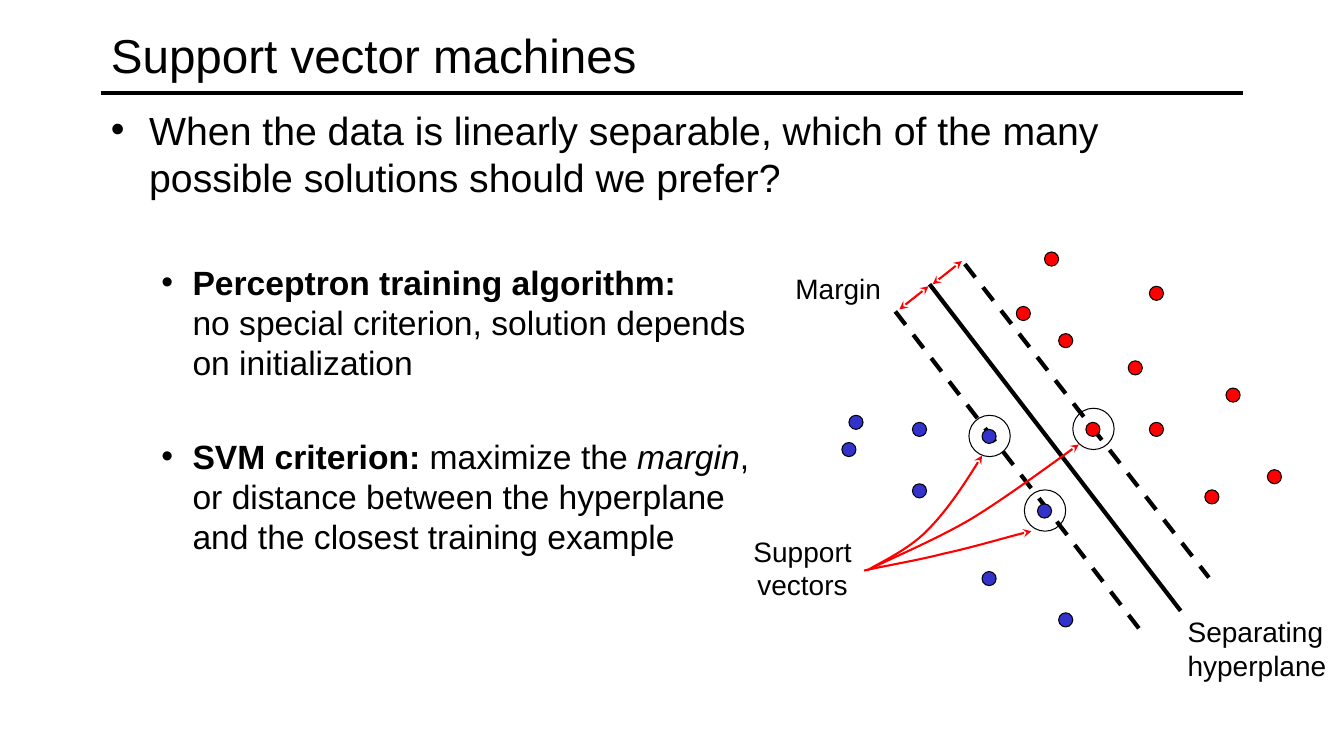
from dataclasses import dataclass

from lxml import etree
from pptx import Presentation
from pptx import util as u
from pptx.dml.color import RGBColor
from pptx.enum import dml, shapes, text
from pptx.oxml import ns

PX = 9144  # 100 px to the inch
FONT = "Arial"
BLACK, RED, BLUE = "000000", "FF0000", "3333CC"
DOT = 14


@dataclass
class Line:
    start: tuple[int, int]
    end: tuple[int, int]
    color: str = BLACK
    width: float = 3
    dashed: bool = False
    arrows: tuple[str, ...] = ()


@dataclass
class Label:
    words: str
    box: tuple[int, int, int, int]
    align: text.PP_ALIGN = text.PP_ALIGN.LEFT
    wrap: bool = True


@dataclass
class Bullet:
    level: int
    size: int
    margin: int
    hang: int
    before: int
    lines: list[list[tuple[str, str]]]  # (words, style) runs; style is "", "b" or "i"


BULLETS = [
    Bullet(0, 28, 38, 38, 0, [[(
        "When the data is linearly separable, which of the many "
        "possible solutions should we prefer?", "")]]),
    Bullet(1, 24, 81, 31, 44, [
        [("Perceptron training algorithm: ", "b")],
        [("no special criterion, solution depends ", "")],
        [("on initialization", "")]]),
    Bullet(1, 24, 81, 31, 38, [
        [("SVM criterion: ", "b"), ("maximize the ", ""), ("margin", "i"), (", ", "")],
        [("or distance between the hyperplane ", "")],
        [("and the closest training example", "")]]),
]

BOTH_ENDS = ("headEnd", "tailEnd")
LINES = [
    Line((100, 92), (1233, 92)),  # rule under the title
    Line((957, 262), (1199, 573), dashed=True),
    Line((888, 309), (1137, 633), dashed=True),
    Line((922, 282), (1171, 606)),  # separating hyperplane
    Line((892, 307), (921, 284), RED, 1.5, arrows=BOTH_ENDS),
    Line((925, 282), (954, 259), RED, 1.5, arrows=BOTH_ENDS),
]

# Top left corners of the data points
DOTS = {
    BLUE: [(842, 412), (905, 419), (905, 480), (835, 439), (974, 567),
           (1050, 608), (974, 426), (1029, 500)],
    RED: [(1050, 331), (1119, 358), (1140, 419), (1008, 304), (1195, 486), (1216, 385),
          (1140, 284), (1257, 466), (1036, 250), (1077, 419)],
}
RINGS = [(961, 412), (1064, 405), (1016, 486)]
RING = 41

# Each pointer: its tip, then three points for every Bezier segment
POINTERS = [
    [(974, 452), (957, 480), (938, 508), (919, 527), (900, 546), (873, 558), (860, 566)],
    [(1023, 527), (1008, 530), (965, 543), (937, 549), (910, 556), (874, 562), (857, 566)],
    [(1070, 441), (1053, 453), (996, 495), (963, 515), (929, 535), (884, 554), (864, 564)],
]

LABELS = [
    Label("Margin", (779, 264, 105, 43), wrap=False),
    Label("Support vectors", (717, 525, 158, 77), text.PP_ALIGN.CENTER),
    Label("Separating hyperplane", (1168, 605, 165, 77)),
]


def px(*values: int) -> list[int]:
    return [u.Emu(v * PX) for v in values]


def rgb(color: str) -> RGBColor:
    return RGBColor.from_string(color)


def place(sp, box: tuple[int, int, int, int]) -> None:
    sp.left, sp.top, sp.width, sp.height = px(*box)


def add_run(p, words: str, size: int, style: str = "") -> None:
    r = p.add_run()
    r.text = words
    r.font.name, r.font.size = FONT, u.Pt(size)
    r.font.bold, r.font.italic = style == "b", style == "i"
    r.font.color.rgb = rgb(BLACK)


def set_stroke(sp, color: str, width: float, dashed: bool = False, arrows=()) -> None:
    sp.line.color.rgb = rgb(color)
    sp.line.width = u.Pt(width)
    if dashed:
        sp.line.dash_style = dml.MSO_LINE.DASH
    ln = sp.line.fill._xPr
    for end in arrows:
        etree.SubElement(ln, ns.qn(f"a:{end}"), type="stealth")


def add_line(slide, line: Line) -> None:
    sp = slide.shapes.add_connector(
        shapes.MSO_CONNECTOR.STRAIGHT, *px(*line.start, *line.end))
    set_stroke(sp, line.color, line.width, line.dashed, line.arrows)
    etree.SubElement(sp._element.spPr, ns.qn("a:effectLst"))


def add_circle(slide, corner: tuple[int, int], size: int, fill: str | None = None) -> None:
    sp = slide.shapes.add_shape(shapes.MSO_SHAPE.OVAL, *px(*corner, size, size))
    sp.shadow.inherit = False
    if fill:
        sp.fill.solid()
        sp.fill.fore_color.rgb = rgb(fill)
    else:
        sp.fill.background()
    set_stroke(sp, BLACK, 0.75)


def add_pointer(slide, points: list[tuple[int, int]]) -> None:
    builder = slide.shapes.build_freeform(*points[0], scale=PX)
    builder.add_line_segments(points[1:], close=False)
    sp = builder.convert_to_shape()
    sp.shadow.inherit = False
    sp.fill.background()
    set_stroke(sp, RED, 1.5, arrows=("headEnd",))
    # Turn every three straight steps into one Bezier segment
    steps = list(sp._element.iter(ns.qn("a:lnTo")))
    outline = steps[0].getparent()
    for i in range(0, len(steps), 3):
        curve = etree.SubElement(outline, ns.qn("a:cubicBezTo"))
        for step in steps[i:i + 3]:
            curve.append(step[0])
            outline.remove(step)


def add_label(slide, label: Label) -> None:
    sp = slide.shapes.add_textbox(*px(*label.box))
    tf = sp.text_frame
    tf.word_wrap = label.wrap
    p = tf.paragraphs[0]
    p.alignment = label.align
    add_run(p, label.words, 20)


def fill_bullet(p, bullet: Bullet) -> None:
    p.level = bullet.level
    p.space_before = u.Pt(bullet.before)
    pPr = p._p.get_or_add_pPr()
    pPr.set("marL", str(bullet.margin * PX))
    pPr.set("indent", str(-bullet.hang * PX))
    etree.SubElement(pPr, ns.qn("a:buChar"), char="•")
    for i, runs in enumerate(bullet.lines):
        if i:
            p.add_line_break()
        for words, style in runs:
            add_run(p, words, bullet.size, style)


def main() -> None:
    prs = Presentation()
    prs.slide_width, prs.slide_height = px(1333, 750)
    slide = prs.slides.add_slide(prs.slide_layouts[1])

    # Title
    title = slide.shapes.title
    place(title, (100, 8, 1133, 92))
    tf = title.text_frame
    tf.auto_size = text.MSO_AUTO_SIZE.NONE
    tf.vertical_anchor = text.MSO_ANCHOR.MIDDLE
    tf.paragraphs[0].alignment = text.PP_ALIGN.LEFT
    add_run(tf.paragraphs[0], "Support vector machines", 34)

    # Bullet list
    body = slide.placeholders[1]
    place(body, (100, 100, 1133, 575))
    tf = body.text_frame
    tf.auto_size = text.MSO_AUTO_SIZE.NONE
    for i, bullet in enumerate(BULLETS):
        fill_bullet(tf.add_paragraph() if i else tf.paragraphs[0], bullet)

    # Diagram, from back to front
    for line in LINES:
        add_line(slide, line)
    for color, corners in DOTS.items():
        for corner in corners:
            add_circle(slide, corner, DOT, color)
    for points in POINTERS:
        add_pointer(slide, points)
    for corner in RINGS:
        add_circle(slide, corner, RING)
    for label in LABELS:
        add_label(slide, label)

    prs.save("out.pptx")


if __name__ == "__main__":
    main()
